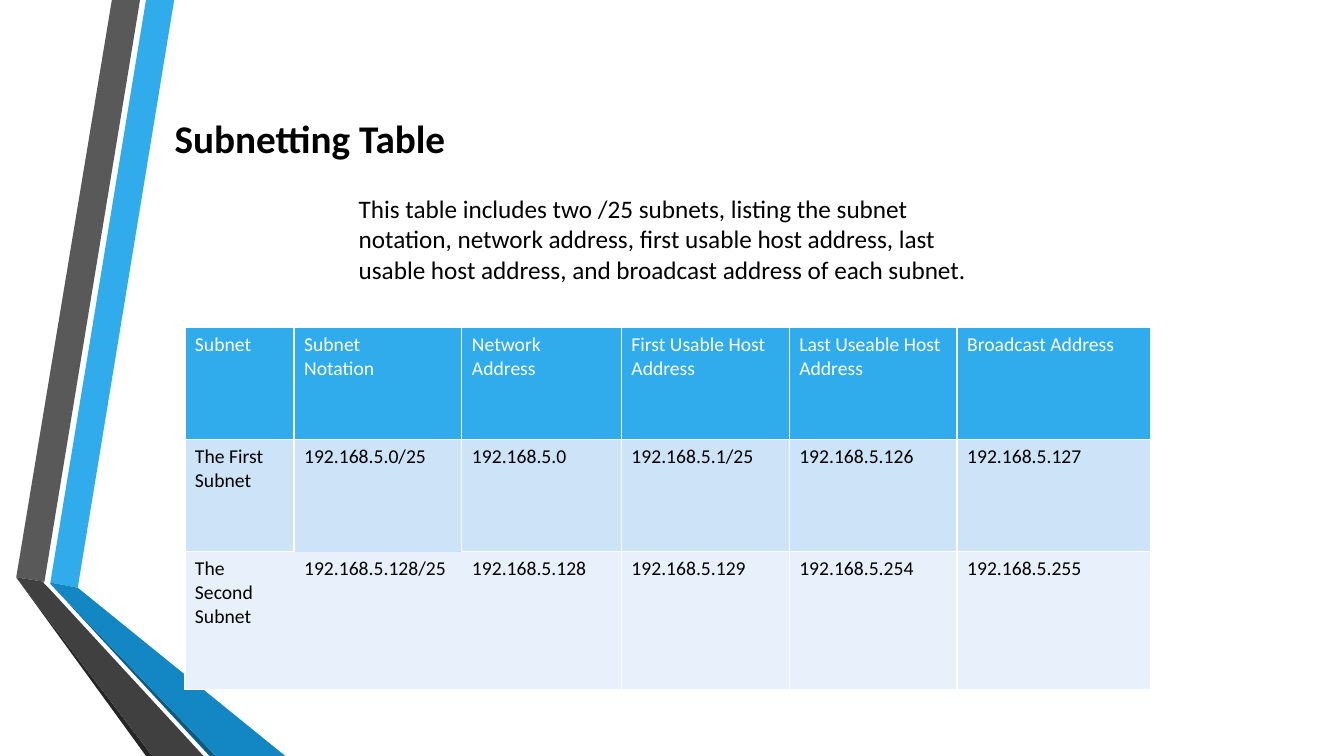
from lxml import etree
from pptx import Presentation
from pptx.dml.color import RGBColor
from pptx.enum.text import MSO_ANCHOR, PP_ALIGN
from pptx.oxml.ns import qn
from pptx.util import Cm, Pt

LEFT, CENTER = PP_ALIGN.LEFT, PP_ALIGN.CENTER
TOP, MIDDLE = MSO_ANCHOR.TOP, MSO_ANCHOR.MIDDLE
FONT = "Calibri"
COLORS = {
    "black": "000000", "white": "FFFFFF",
    "blue": "30ACEC", "deep blue": "1287C3", "blue edge": "0C5A82",
    "gray": "595959", "deep gray": "404040", "gray edge": "262626",
    "first row": "CDE3F8", "second row": "E8F1FB",
}
RIBBONS = [
    ("blue", [(1.27, 14.68), (1.96, 14.81), (4.39, 0), (3.68, 0)]),
    ("gray", [(3.53, 0), (2.82, 0), (0.41, 14.55), (1.12, 14.66)]),
    ("gray edge", [(0.41, 14.55), (3.68, 19.05), (3.84, 19.05)]),
    ("blue edge", [(1.27, 14.71), (5.28, 19.05), (5.44, 19.05)]),
    ("deep blue", [(1.27, 14.71), (5.44, 19.05), (7.19, 19.05), (1.96, 14.81), (1.27, 14.68)]),
    ("deep gray", [(5.13, 19.05), (1.22, 14.81), (1.09, 14.68), (1.12, 14.66),
                   (0.41, 14.55), (3.84, 19.05)]),
]
TITLE = "Subnetting Table"
SUMMARY = ("This table includes two /25 subnets, listing the subnet notation, network address, "
           "first usable host address, last usable host address, and broadcast address of each subnet.")
SUBNETS = [
    ["Subnet", "Subnet\nNotation", "Network\nAddress", "First Usable Host Address",
     "Last Useable Host Address", "Broadcast Address"],
    ["The First Subnet", "192.168.5.0/25", "192.168.5.0", "192.168.5.1/25",
     "192.168.5.126", "192.168.5.127"],
    ["The Second Subnet", "192.168.5.128/25", "192.168.5.128", "192.168.5.129",
     "192.168.5.254", "192.168.5.255"],
]
COLUMN_WIDTHS = [2.75, 4.23, 4.02, 4.23, 4.23, 4.88]
ROW_HEIGHTS = [2.82, 2.82, 3.47]
ROW_STYLES = [("blue", "white"), ("first row", "black"), ("second row", "black")]
OPEN_EDGES = {(1, 1): "B", (2, 0): "R", (2, 1): "LRTB", (2, 2): "L"}


def rgb(name):
    """Return the named colour."""
    return RGBColor.from_string(COLORS[name])


def write_text(frame, text, color, size, bold=False, align=LEFT):
    """Fill a text frame with one paragraph for each line."""
    frame.text = text
    for paragraph in frame.paragraphs:
        paragraph.alignment = align
        for key, value in {"name": FONT, "size": Pt(size), "bold": bold}.items():
            setattr(paragraph.font, key, value)
        paragraph.font.color.rgb = rgb(color)


def add_ribbon(slide, color, points):
    """Draw one filled outline of the folded ribbon."""
    corners = [(Cm(x), Cm(y)) for x, y in points]
    builder = slide.shapes.build_freeform(*corners[0], scale=1)
    builder.add_line_segments(corners[1:], close=True)
    shape = builder.convert_to_shape()
    shape.shadow.inherit = False
    shape.fill.solid()
    shape.fill.fore_color.rgb = rgb(color)
    shape.line.fill.background()


def add_text(slide, box, text, size, anchor=TOP, **style):
    """Add a wrapped text box."""
    frame = slide.shapes.add_textbox(*map(Cm, box)).text_frame
    for key, value in {"word_wrap": True, "vertical_anchor": anchor}.items():
        setattr(frame, key, value)
    write_text(frame, text, "black", size, **style)


def set_borders(cell, open_edges):
    """Give a cell thin white borders, leaving the open edges bare."""
    properties = cell._tc.get_or_add_tcPr()
    for index, edge in enumerate("LRTB"):
        line = etree.Element(qn(f"a:ln{edge}"), w=str(Pt(1)))
        if edge in open_edges:
            etree.SubElement(line, qn("a:noFill"))
        else:
            fill = etree.SubElement(line, qn("a:solidFill"))
            etree.SubElement(fill, qn("a:srgbClr"), val=COLORS["white"])
        properties.insert(index, line)


def add_subnet_table(slide):
    """Add the table of subnet addresses."""
    table = slide.shapes.add_table(
        len(ROW_HEIGHTS), len(COLUMN_WIDTHS), Cm(4.66), Cm(8.26),
        Cm(sum(COLUMN_WIDTHS)), Cm(sum(ROW_HEIGHTS))).table
    for column, width in zip(table.columns, COLUMN_WIDTHS):
        column.width = Cm(width)
    for row_index, (fill, color) in enumerate(ROW_STYLES):
        table.rows[row_index].height = Cm(ROW_HEIGHTS[row_index])
        for column_index, text in enumerate(SUBNETS[row_index]):
            cell = table.cell(row_index, column_index)
            write_text(cell.text_frame, text, color, 14)
            cell.fill.solid()
            cell.fill.fore_color.rgb = rgb(fill)
            set_borders(cell, OPEN_EDGES.get((row_index, column_index), ""))


def main():
    """Build and save the subnetting slide."""
    presentation = Presentation()
    presentation.slide_width, presentation.slide_height = Cm(33.87), Cm(19.05)
    slide = presentation.slides.add_slide(presentation.slide_layouts[6])
    for color, points in RIBBONS:
        add_ribbon(slide, color, points)
    add_text(slide, (8.79, 4.75, 16.31, 3.5), SUMMARY, 18)
    add_text(slide, (3.48, 2.21, 8.66, 2.54), TITLE, 28, anchor=MIDDLE, bold=True, align=CENTER)
    add_subnet_table(slide)
    presentation.save("out.pptx")


if __name__ == "__main__":
    main()
